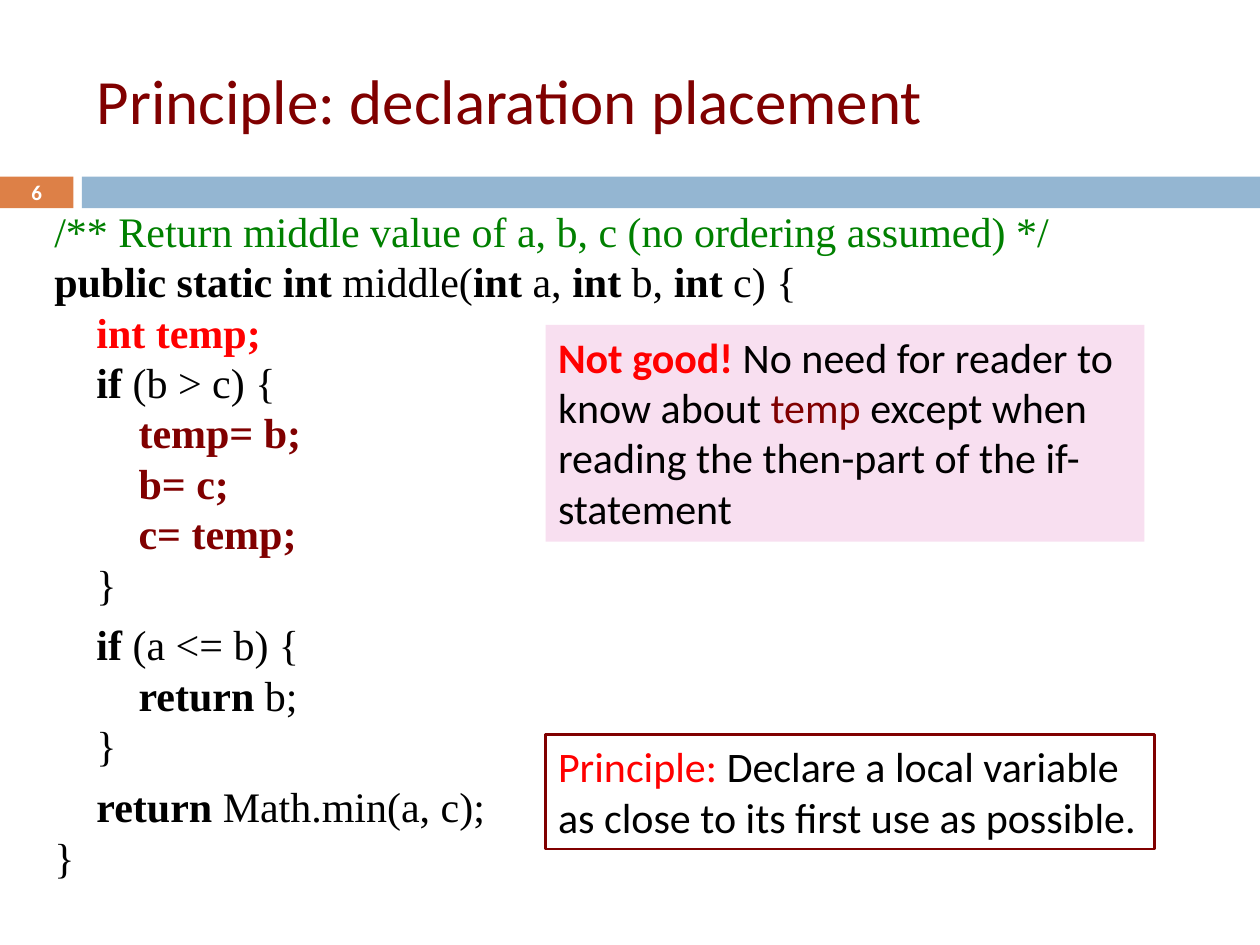
from dataclasses import dataclass

from lxml.etree import SubElement
from pptx import Presentation
from pptx.dml.color import RGBColor
from pptx.enum.shapes import MSO_SHAPE as Shape
from pptx.enum.text import MSO_ANCHOR as Anchor, MSO_AUTO_SIZE as AutoSize, PP_ALIGN as Align
from pptx.oxml.ns import qn
from pptx.util import Cm, Pt


@dataclass(frozen=True)
class Theme:
    black: str = "000000"
    white: str = "FFFFFF"
    maroon: str = "800000"
    red: str = "FF0000"
    green: str = "008000"
    orange: str = "DD8047"
    blue: str = "94B6D2"
    pink: str = "F8DFF0"
    sans: str = "Calibri"
    serif: str = "Times New Roman"
    title_size: float = 36
    text_size: float = 24
    number_size: float = 12
    code_pitch: float = 28.8
    code_gap: float = 6
    code_indent: float = 0.85


THEME = Theme()
PLAIN = (THEME.black, False)
KEYWORD = (THEME.black, True)
COMMENT = (THEME.green, False)
ALERT = (THEME.red, True)
SWAP = (THEME.maroon, True)
LABEL = (THEME.red, False)
NAME = (THEME.maroon, False)

# level, gap before, spans
CODE = [
    (0, False, [("/** Return middle value of a, b, c (no ordering assumed) */", COMMENT)]),
    (0, False, [("public static int", KEYWORD), (" middle(", PLAIN), ("int", KEYWORD),
                (" a, ", PLAIN), ("int", KEYWORD), (" b, ", PLAIN), ("int", KEYWORD),
                (" c) {", PLAIN)]),
    (1, False, [("int temp;", ALERT)]),
    (1, False, [("if", KEYWORD), (" (b > c) {", PLAIN)]),
    (2, False, [("temp= b;", SWAP)]),
    (2, False, [("b= c;", SWAP)]),
    (2, False, [("c= temp;", SWAP)]),
    (1, False, [("}", PLAIN)]),
    (1, True, [("if ", KEYWORD), ("(a <= b) {", PLAIN)]),
    (2, False, [("return", KEYWORD), (" b;", PLAIN)]),
    (1, False, [("}", PLAIN)]),
    (1, True, [("return ", KEYWORD), ("Math.min(a, c);", PLAIN)]),
    (0, False, [("}", PLAIN)]),
]
WARNING = [("Not good! ", ALERT), ("No need for reader to know about ", PLAIN), ("temp", NAME),
           (" except when reading the then-part of the if- statement", PLAIN)]
PRINCIPLE = [("Principle: ", LABEL),
             ("Declare a local variable as close to its first use as possible.", PLAIN)]


def color(value):
    return RGBColor.from_string(value)


def place(box, left, top, width, height):
    box.left, box.top, box.width, box.height = Cm(left), Cm(top), Cm(width), Cm(height)


def write_spans(para, spans, font, size):
    for words, (tint, bold) in spans:
        span = para.add_run()
        span.text = words
        span.font.name = font
        span.font.size = Pt(size)
        span.font.bold = bold
        span.font.color.rgb = color(tint)


def add_title(page, words):
    box = page.shapes.title
    place(box, 1.7, 0.64, 22.66, 2.74)
    frame = box.text_frame
    frame.auto_size = AutoSize.NONE
    frame.vertical_anchor = Anchor.MIDDLE
    para = frame.paragraphs[0]
    para.alignment = Align.LEFT
    write_spans(para, [(words, NAME)], THEME.sans, THEME.title_size)


def add_code(page, lines):
    box = page.placeholders[1]
    place(box, 0.84, 4.01, 22.23, 12.5)
    frame = box.text_frame
    frame.auto_size = AutoSize.NONE
    for index, (level, gap, spans) in enumerate(lines):
        para = frame.add_paragraph() if index else frame.paragraphs[0]
        para.line_spacing = Pt(THEME.code_pitch)
        para.space_before = Pt(THEME.code_gap if gap else 0)
        properties = para._p.get_or_add_pPr()
        properties.set("marL", str(Cm(level * THEME.code_indent)))
        properties.set("indent", "0")
        SubElement(properties, qn("a:buNone"))
        write_spans(para, spans, THEME.serif, THEME.text_size)


def add_box(page, left, top, width, height, fill=None, line=None):
    box = page.shapes.add_shape(Shape.RECTANGLE, Cm(left), Cm(top), Cm(width), Cm(height))
    box.shadow.inherit = False
    if fill:
        box.fill.solid()
        box.fill.fore_color.rgb = color(fill)
    else:
        box.fill.background()
    if line:
        box.line.color.rgb = color(line)
        box.line.width = Pt(1.5)
    else:
        box.line.fill.background()
    return box


def add_number_bar(page, number):
    top, height = 3.56, 0.64
    badge = add_box(page, 0, top, 1.48, height, fill=THEME.orange)
    add_box(page, 1.65, top, 23.75, height, fill=THEME.blue)
    frame = badge.text_frame
    frame.margin_top = frame.margin_bottom = 0
    frame.vertical_anchor = Anchor.MIDDLE
    para = frame.paragraphs[0]
    para.alignment = Align.CENTER
    write_spans(para, [(number, (THEME.white, True))], THEME.sans, THEME.number_size)


def add_callout(page, spans, top, width, height, **style):
    frame = add_box(page, 11, top, width, height, **style).text_frame
    frame.word_wrap = True
    frame.vertical_anchor = Anchor.TOP
    para = frame.paragraphs[0]
    para.alignment = Align.LEFT
    write_spans(para, spans, THEME.sans, THEME.text_size)


def main():
    deck = Presentation()
    deck.slide_width, deck.slide_height = Cm(25.4), Cm(19.05)
    page = deck.slides.add_slide(deck.slide_layouts[1])
    add_number_bar(page, "6")
    add_title(page, "Principle: declaration placement")
    add_code(page, CODE)
    add_callout(page, PRINCIPLE, 14.81, 12.28, 2.31, line=THEME.maroon)
    add_callout(page, WARNING, 6.55, 12.07, 4.37, fill=THEME.pink)
    deck.save("out.pptx")


if __name__ == "__main__":
    main()
